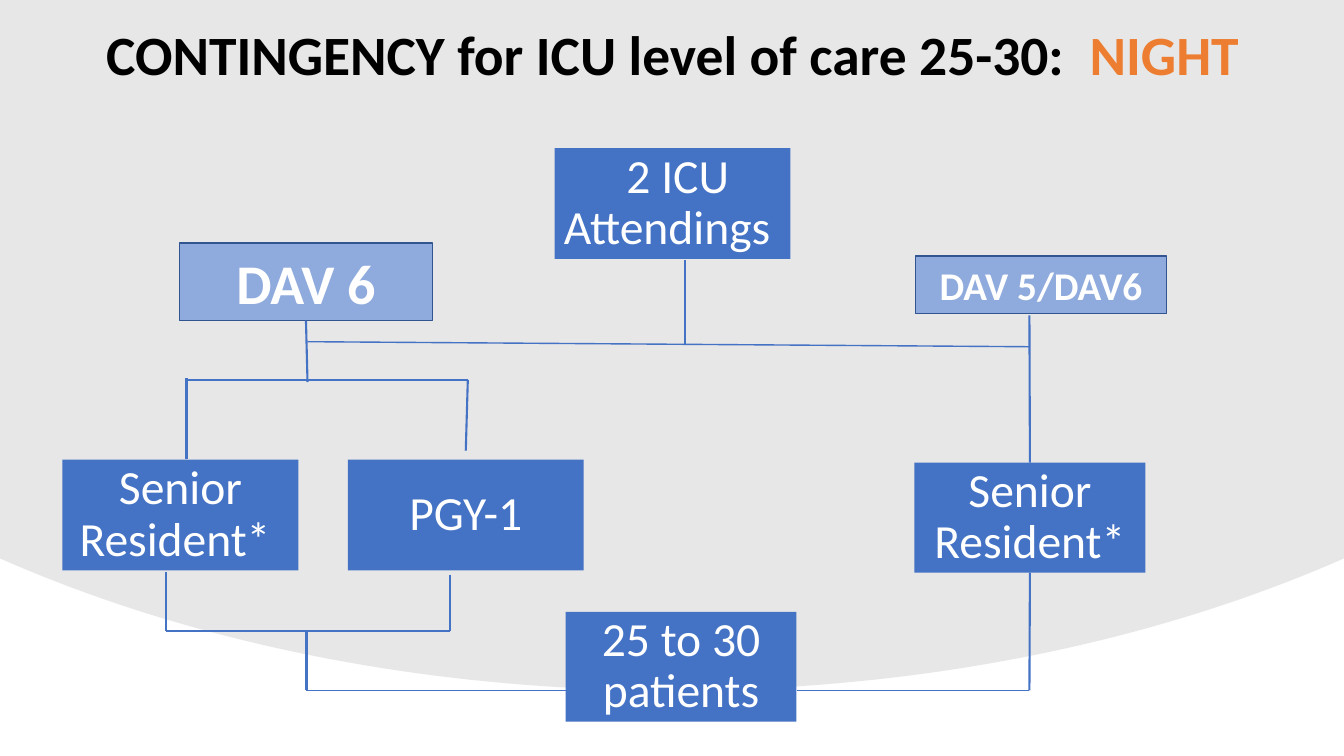
import pptx
import pptx.util
import pptx.dml.color
import pptx.enum.shapes
import pptx.enum.text
import pptx.oxml
import pptx.oxml.ns
from pptx.util import Inches

BOTTOM, TOP = 2, 0


def color(hex_string):
    return pptx.dml.color.RGBColor.from_string(hex_string)


class NightChart:
    """Hold the style and current slide of the staffing chart."""

    font_name = "Calibri"
    blue = "4472C4"
    pale_blue = "8FAADC"
    dark_blue = "325491"
    white = "FFFFFF"
    black = "000000"
    orange = "ED7D31"
    backdrop_gray = "D9D9D9"

    def __init__(self, slide):
        self.slide = slide

    def style_font(self, font, size, hex_string, bold=False):
        font.name = self.font_name
        font.size = pptx.util.Pt(size)
        font.bold = bold
        font.color.rgb = color(hex_string)

    def backdrop(self, width, side, depth, steps=40):
        half = width / 2
        controls = [(width, side), (11.47, 6.36), (9.17, depth), (half, depth)]
        right = []
        for step in range(steps + 1):
            t = step / steps
            weights = ((1 - t) ** 3, 3 * t * (1 - t) ** 2, 3 * t * t * (1 - t), t ** 3)
            right.append(tuple(sum(w * point[axis] for w, point in zip(weights, controls))
                               for axis in (0, 1)))
        left = [(width - x, y) for x, y in reversed(right[:-1])]
        outline = [(width, 0)] + right + left
        builder = self.slide.shapes.build_freeform(0, 0)
        builder.add_line_segments([(Inches(x), Inches(y)) for x, y in outline], close=True)
        dome = builder.convert_to_shape()
        dome.shadow.inherit = False
        dome.fill.solid()
        dome.fill.fore_color.rgb = color(self.backdrop_gray)
        dome.line.fill.background()
        tint = dome.fill._xPr.find(".//" + pptx.oxml.ns.qn("a:srgbClr"))
        tint.append(pptx.oxml.parse_xml(
            f'<a:alpha {pptx.oxml.ns.nsdecls("a")} val="62000"/>'))

    def title(self, text, shift, left, top, width, height):
        heading = self.slide.shapes.add_textbox(
            Inches(left), Inches(top), Inches(width), Inches(height))
        frame = heading.text_frame
        frame.word_wrap = True
        frame.vertical_anchor = pptx.enum.text.MSO_ANCHOR.MIDDLE
        paragraph = frame.paragraphs[0]
        paragraph.alignment = pptx.enum.text.PP_ALIGN.CENTER
        paragraph.line_spacing = 0.9
        for words, hex_string in ((text, self.black), (shift, self.orange)):
            run = paragraph.add_run()
            run.text = words
            self.style_font(run.font, 39.6, hex_string, True)

    def box(self, text, left, top, width, height, fill, size, bold=False):
        rectangle = self.slide.shapes.add_shape(
            pptx.enum.shapes.MSO_SHAPE.RECTANGLE,
            Inches(left), Inches(top), Inches(width), Inches(height))
        rectangle.shadow.inherit = False
        rectangle.fill.solid()
        rectangle.fill.fore_color.rgb = color(fill)
        frame = rectangle.text_frame
        frame.word_wrap = True
        frame.vertical_anchor = pptx.enum.text.MSO_ANCHOR.MIDDLE
        paragraph = frame.paragraphs[0]
        paragraph.text = text
        paragraph.alignment = pptx.enum.text.PP_ALIGN.CENTER
        self.style_font(paragraph.font, size, self.white, bold)
        return rectangle

    def role(self, text, left, top, width=2.34, height=1.1):
        rectangle = self.box(text, left, top, width, height, self.blue, 34)
        rectangle.line.fill.background()
        frame = rectangle.text_frame
        frame.margin_left = frame.margin_right = Inches(0.02)
        frame.margin_top = frame.margin_bottom = Inches(0.02)
        frame.paragraphs[0].line_spacing = 0.9
        return rectangle

    def unit(self, text, left, top, width, height, size):
        rectangle = self.box(text, left, top, width, height, self.pale_blue, size, True)
        rectangle.line.color.rgb = color(self.dark_blue)
        rectangle.line.width = pptx.util.Pt(1)
        return rectangle

    def link(self, x1, y1, x2, y2, weight=1.5, begin=None, end=None):
        connector = self.slide.shapes.add_connector(
            pptx.enum.shapes.MSO_CONNECTOR.STRAIGHT,
            Inches(x1), Inches(y1), Inches(x2), Inches(y2))
        connector.line.color.rgb = color(self.blue)
        connector.line.width = pptx.util.Pt(weight)
        properties = connector._element.spPr
        properties.append(pptx.oxml.parse_xml(
            f'<a:effectLst {pptx.oxml.ns.nsdecls("a")}/>'))
        if begin:
            connector.begin_connect(*begin)
        if end:
            connector.end_connect(*end)


def main():
    presentation = pptx.Presentation()
    presentation.slide_width = Inches(13.33)
    presentation.slide_height = Inches(7.5)
    chart = NightChart(presentation.slides.add_slide(presentation.slide_layouts[6]))

    chart.backdrop(13.33, 5.54, 6.85)
    chart.title("CONTINGENCY for ICU level of care 25-30:  ", "NIGHT", 0.92, 0.03, 11.5, 1.08)

    chart.role(" 2 ICU Attendings ", 5.5, 1.47)
    chart.role("PGY-1", 3.45, 4.56)
    chart.role("Senior Resident* ", 0.62, 4.56)
    dav_6 = chart.unit("DAV 6", 1.78, 2.41, 2.51, 0.77, 40)
    chart.role("25 to 30 patients", 5.61, 6.07, 2.29, 1.09)
    right_senior = chart.role("Senior Resident*", 9.07, 4.59, 2.29, 1.09)
    chart.unit("DAV 5/DAV6", 9.08, 2.54, 2.49, 0.57, 28)

    chart.link(10.21, 5.7, 10.21, 6.85, begin=(right_senior, BOTTOM))
    chart.link(10.21, 3.13, 10.21, 4.56, end=(right_senior, TOP))
    chart.link(3.04, 3.19, 3.05, 3.79, begin=(dav_6, BOTTOM))
    for stem in (
        (4.46, 5.7, 4.46, 6.26),
        (1.65, 5.67, 1.65, 6.26),
        (3.04, 6.26, 3.04, 6.85),
        (6.79, 2.58, 6.79, 3.41),
        (1.85, 3.75, 1.85, 4.55),
        (4.64, 3.77, 4.62, 4.47),
    ):
        chart.link(*stem)
    for crossbar in (
        (10.21, 6.85, 7.9, 6.85),
        (4.46, 6.26, 1.65, 6.26),
        (5.61, 6.85, 3.04, 6.85),
        (4.64, 3.77, 1.83, 3.77),
        (10.21, 3.44, 3.05, 3.39),
    ):
        chart.link(*crossbar, weight=1)

    presentation.save("out.pptx")


if __name__ == "__main__":
    main()
